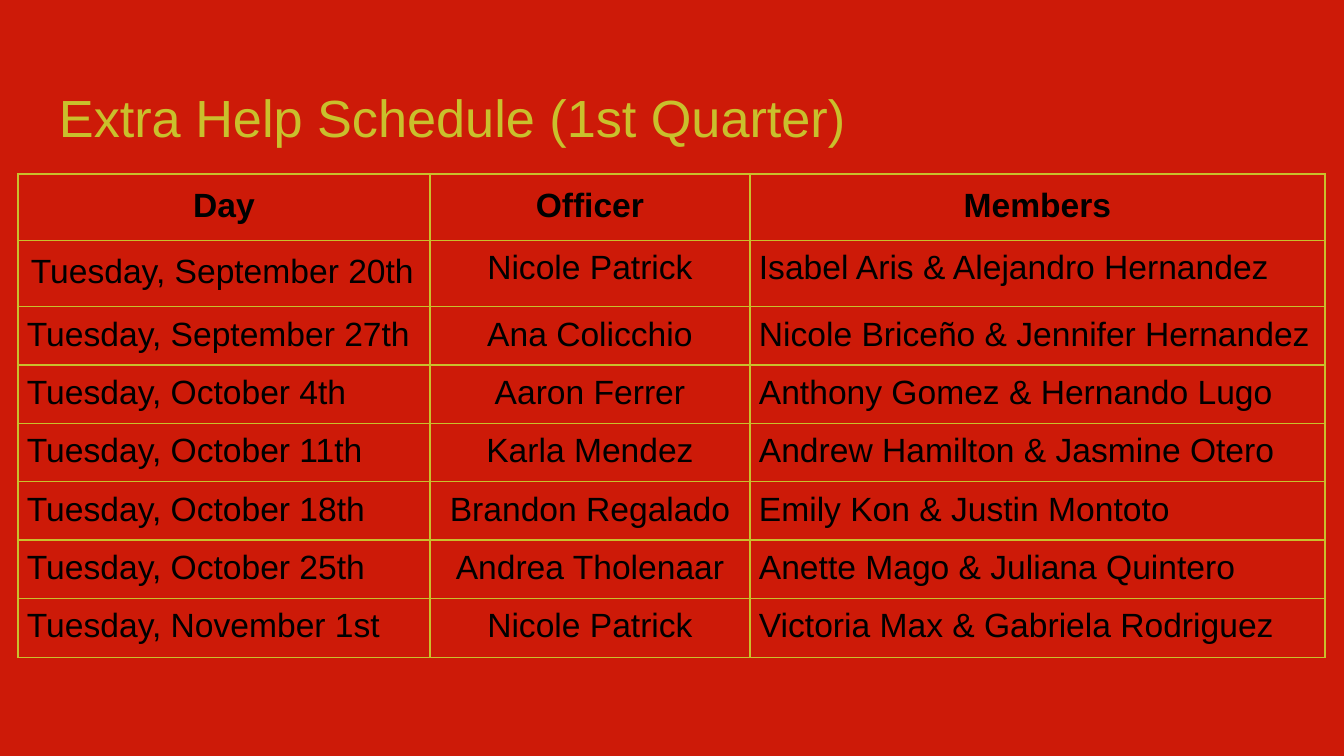
from pptx import Presentation
from pptx.dml.color import RGBColor
from pptx.enum.text import MSO_ANCHOR as Anchor, PP_ALIGN as Align
from pptx.oxml import parse_xml
from pptx.oxml.ns import nsdecls
from pptx.util import Emu, Pt

EMU_PER_INCH = 914400
PX_PER_INCH = 134.4
COLORS = {"background": "CD1A08", "gold": "C9C02C", "text": "000000"}
FONT = "Arial"
WIDE_INSET, CELL_INSET = 13, 9

HEADINGS = ("Day", "Officer", "Members")
SCHEDULE = (
    ("Tuesday, September 20th", "Nicole Patrick", "Isabel Aris & Alejandro Hernandez"),
    ("Tuesday, September 27th", "Ana Colicchio", "Nicole Briceño & Jennifer Hernandez"),
    ("Tuesday, October 4th", "Aaron Ferrer", "Anthony Gomez & Hernando Lugo"),
    ("Tuesday, October 11th", "Karla Mendez", "Andrew Hamilton & Jasmine Otero"),
    ("Tuesday, October 18th", "Brandon Regalado", "Emily Kon & Justin Montoto"),
    ("Tuesday, October 25th", "Andrea Tholenaar", "Anette Mago & Juliana Quintero"),
    ("Tuesday, November 1st", "Nicole Patrick", "Victoria Max & Gabriela Rodriguez"),
)
COLUMN_WIDTHS = (412, 320, 575)
ROW_HEIGHTS = (66, 54, 58, 58, 58, 58, 58, 59)


def px(length):
    return Emu(round(length * EMU_PER_INCH / PX_PER_INCH))


def set_insets(target, inset):
    for side in ("left", "top", "right", "bottom"):
        setattr(target, f"margin_{side}", px(inset))


def write_text(frame, text, size=18, color="text", bold=False, align=Align.LEFT, spacing=None):
    paragraph = frame.paragraphs[0]
    paragraph.alignment = align
    paragraph.line_spacing = spacing
    run = paragraph.add_run()
    run.text = text
    run.font.name = FONT
    run.font.size = Pt(size)
    run.font.bold = bold
    run.font.color.rgb = RGBColor.from_string(COLORS[color])


def add_title(slide, text, left, top, width, height):
    shape = slide.shapes.add_textbox(px(left), px(top), px(width), px(height))
    frame = shape.text_frame
    frame.word_wrap = True
    frame.vertical_anchor = Anchor.TOP
    set_insets(frame, WIDE_INSET)
    write_text(frame, text, size=28, color="gold", spacing=1.1)


def set_borders(cell, color, width):
    properties = cell._tc.get_or_add_tcPr()
    for index, side in enumerate(("lnL", "lnR", "lnT", "lnB")):
        properties.insert(index, parse_xml(
            f'<a:{side} {nsdecls("a")} w="{Pt(width)}"><a:solidFill>'
            f'<a:srgbClr val="{COLORS[color]}"/></a:solidFill></a:{side}>'
        ))


def add_schedule(slide, left, top):
    rows = (HEADINGS, *SCHEDULE)
    table = slide.shapes.add_table(
        len(rows), len(HEADINGS), px(left), px(top),
        px(sum(COLUMN_WIDTHS)), px(sum(ROW_HEIGHTS)),
    ).table
    table.first_row = table.horz_banding = False
    for column, width in zip(table.columns, COLUMN_WIDTHS):
        column.width = px(width)
    for row, height in zip(table.rows, ROW_HEIGHTS):
        row.height = px(height)
    for row_index, values in enumerate(rows):
        is_heading = row_index == 0
        for column_index, text in enumerate(values):
            cell = table.cell(row_index, column_index)
            is_wide = is_heading or (row_index, column_index) == (1, 0)
            is_centered = is_heading or column_index == 1
            cell.fill.background()
            set_borders(cell, "gold", 0.75)
            set_insets(cell, WIDE_INSET if is_wide else CELL_INSET)
            write_text(cell.text_frame, text, bold=is_heading,
                       align=Align.CENTER if is_centered else Align.LEFT)


def main():
    presentation = Presentation()
    presentation.slide_width, presentation.slide_height = px(1344), px(756)
    slide = presentation.slides.add_slide(presentation.slide_layouts[6])
    fill = slide.background.fill
    fill.solid()
    fill.fore_color.rgb = RGBColor.from_string(COLORS["background"])
    add_title(slide, "Extra Help Schedule (1st Quarter)", 46, 66, 1252, 85)
    add_schedule(slide, 18, 174)
    presentation.save("out.pptx")


if __name__ == "__main__":
    main()
